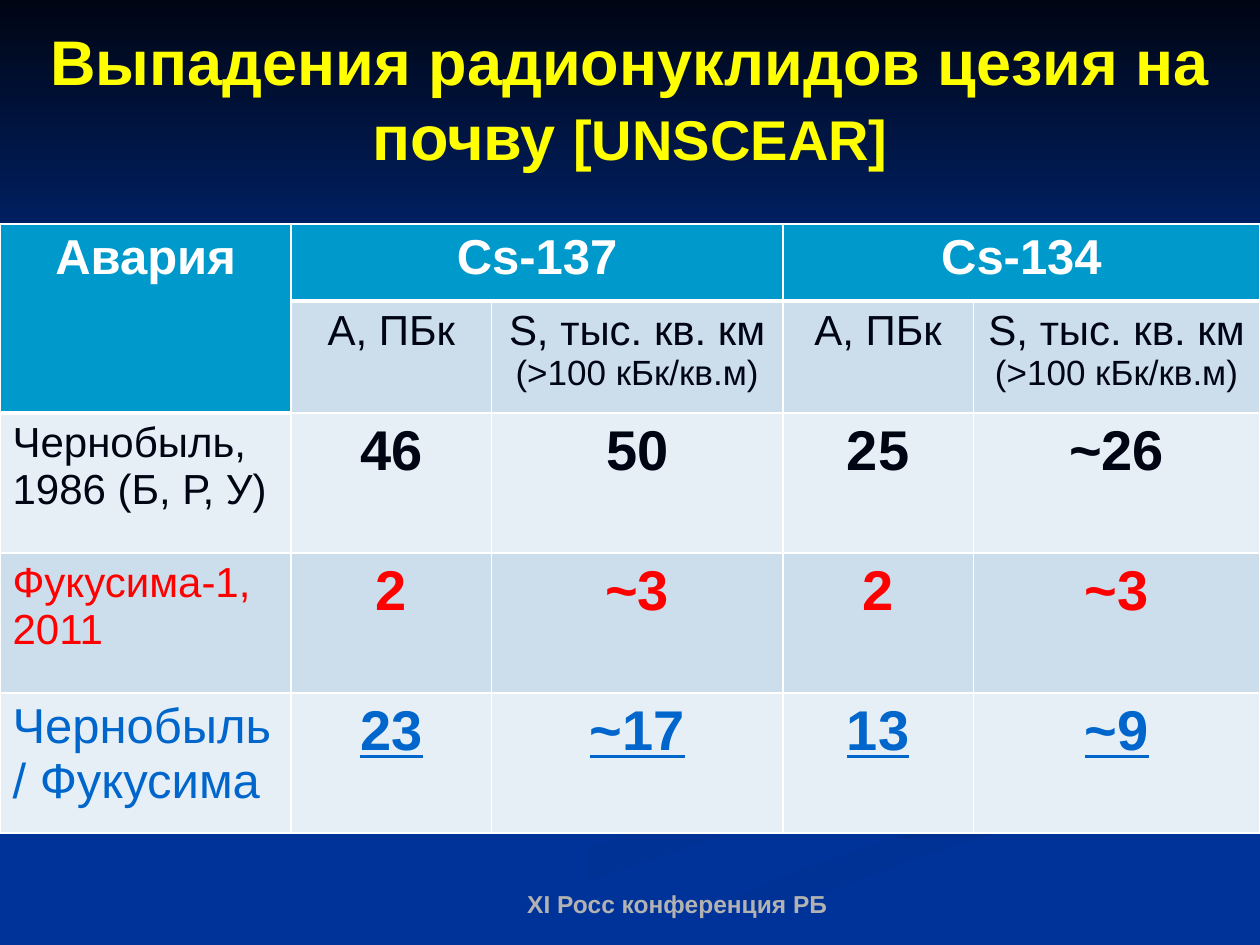
from lxml.etree import SubElement
from pptx import Presentation
from pptx.dml.color import RGBColor
from pptx.enum.shapes import MSO_SHAPE as SHAPE
from pptx.enum.text import MSO_ANCHOR as ANCHOR, MSO_AUTO_SIZE as AUTO, PP_ALIGN as ALIGN
from pptx.oxml.ns import qn
from pptx.util import Cm, Pt


def rgb(color):
    return RGBColor.from_string(color)


def style(r, size, color, bold=False, underline=None):
    f = r.font
    f.name, f.size, f.bold, f.underline = "Arial", Pt(size), bold, underline
    f.color.rgb = rgb(color)


prs = Presentation()
prs.slide_width, prs.slide_height = Cm(25.4), Cm(19.05)
s = prs.slides.add_slide(prs.slide_layouts[5])
s.background.fill.solid()
s.background.fill.fore_color.rgb = rgb("003399")
title = s.shapes.title

arc = [(19.84, 14.05), (18.2, 13.5), (15.6, 12.74), (14.75, 12.1), (14.6, 11.66),
       (14.48, 11.99), (15.06, 12.47), (17.25, 13.18), (19.35, 13.89), (19.94, 14.27),
       (19.66, 14.81), (18.47, 15.29), (15.65, 15.97), (12.67, 16.79), (9.55, 17.96),
       (7.62, 19.02), (9.17, 19.02), (11.84, 17.78), (15.09, 16.66), (18.31, 15.82),
       (19.81, 15.37), (20.29, 14.86), (20.19, 14.4)]
band = [(13.18, 18.97), (12.78, 19.02), (14.5, 19.02), (16, 18.26), (18.34, 17.32),
        (20.85, 16.54), (25.35, 15.47), (25.35, 14.76), (22.94, 15.49), (19.41, 16.43),
        (16, 17.6), (14.45, 18.26)]
swirls = []
for points in (arc, band):
    points = [(Cm(x), Cm(y)) for x, y in points]
    fb = s.shapes.build_freeform(*points[0], scale=1.0)
    fb.add_line_segments(points[1:], close=True)
    swirls.append(fb.convert_to_shape())
sky = s.shapes.add_shape(SHAPE.RECTANGLE, 0, 0, Cm(25.4), Cm(7.82))

backdrop = [(swirls[0], "003399", "003193", 0),
            (swirls[1], "002F8C", "003399", 270),
            (sky, "000514", "003399", 270)]
for sp, start, end, angle in backdrop:
    sp.shadow.inherit = False
    sp.line.fill.background()
    sp.fill.gradient()
    sp.fill.gradient_angle = angle
    for stop, color in zip(sp.fill.gradient_stops, (start, end)):
        stop.color.rgb = rgb(color)
    title.element.addprevious(sp.element)

title.left, title.top, title.width, title.height = 0, 0, Cm(25.4), Cm(3.94)
tf = title.text_frame
tf.word_wrap, tf.auto_size, tf.vertical_anchor = True, AUTO.NONE, ANCHOR.MIDDLE
p = tf.paragraphs[0]
p.alignment = ALIGN.CENTER
for text, size in (("Выпадения радионуклидов цезия на почву ", 36), ("[UNSCEAR]", 32)):
    r = p.add_run()
    r.text = text
    style(r, size, "FFFF00", True)

area = "S, тыс. кв. км\n(>100 кБк/кв.м)"
rows = [["Авария", "Cs-137", "", "Cs-134", ""],
        ["", "A, ПБк", area, "A, ПБк", area],
        ["Чернобыль, 1986 (Б, Р, У)", "46", "50", "25", "~26"],
        ["Фукусима-1, 2011", "2", "~3", "2", "~3"],
        ["Чернобыль/ Фукусима", "23", "~17", "13", "~9"]]
widths = [5.87, 4.04, 5.87, 3.84, 5.78]
heights = [1.55, 2.26, 2.82, 2.82, 2.82]
colors = ["FFFFFF", "000514", "000514", "FF0000", "0066CC"]
label_sizes = [28, 24, 24, 24, 28]

frame = s.shapes.add_table(5, 5, 0, Cm(4.52), Cm(25.4), Cm(12.27))
table = frame.table
table.first_row = table.horz_banding = False
for col, width in zip(table.columns, widths):
    col.width = Cm(width)
for row, height in zip(table.rows, heights):
    row.height = Cm(height)
for first, last in (((0, 0), (1, 0)), ((0, 1), (0, 2)), ((0, 3), (0, 4))):
    table.cell(*first).merge(table.cell(*last))

for i, row in enumerate(rows):
    for j, text in enumerate(row):
        cell = table.cell(i, j)
        header = i == 0 or (i, j) == (1, 0)
        tc_pr = cell._tc.get_or_add_tcPr()
        for side in "LRTB":
            width = 3 if header and side == "B" else 1
            ln = SubElement(tc_pr, qn(f"a:ln{side}"), w=str(Pt(width)))
            fill = SubElement(ln, qn("a:solidFill"))
            SubElement(fill, qn("a:srgbClr"), val="FFFFFF")
        cell.fill.solid()
        cell.fill.fore_color.rgb = rgb("0099CC" if header else "E7EFF6" if i % 2 == 0 else "CCDEEC")
        if not text:
            continue
        cell.text_frame.text = text
        number = i > 1 and j > 0
        for k, p in enumerate(cell.text_frame.paragraphs):
            p.alignment = ALIGN.LEFT if i > 1 and j == 0 else ALIGN.CENTER
            size = 32 if number else 20 if k else label_sizes[i]
            style(p.runs[0], size, colors[i], header or number, True if number and i == 4 else None)

footer = s.shapes.add_textbox(Cm(2.9), Cm(17.73), Cm(21.51), Cm(0.91))
tf = footer.text_frame
tf.word_wrap, tf.vertical_anchor = True, ANCHOR.BOTTOM
tf.text = "XI Росс конференция РБ"
p = tf.paragraphs[0]
p.alignment = ALIGN.CENTER
style(p.runs[0], 14, "B2B2B2", True)

prs.save("out.pptx")
